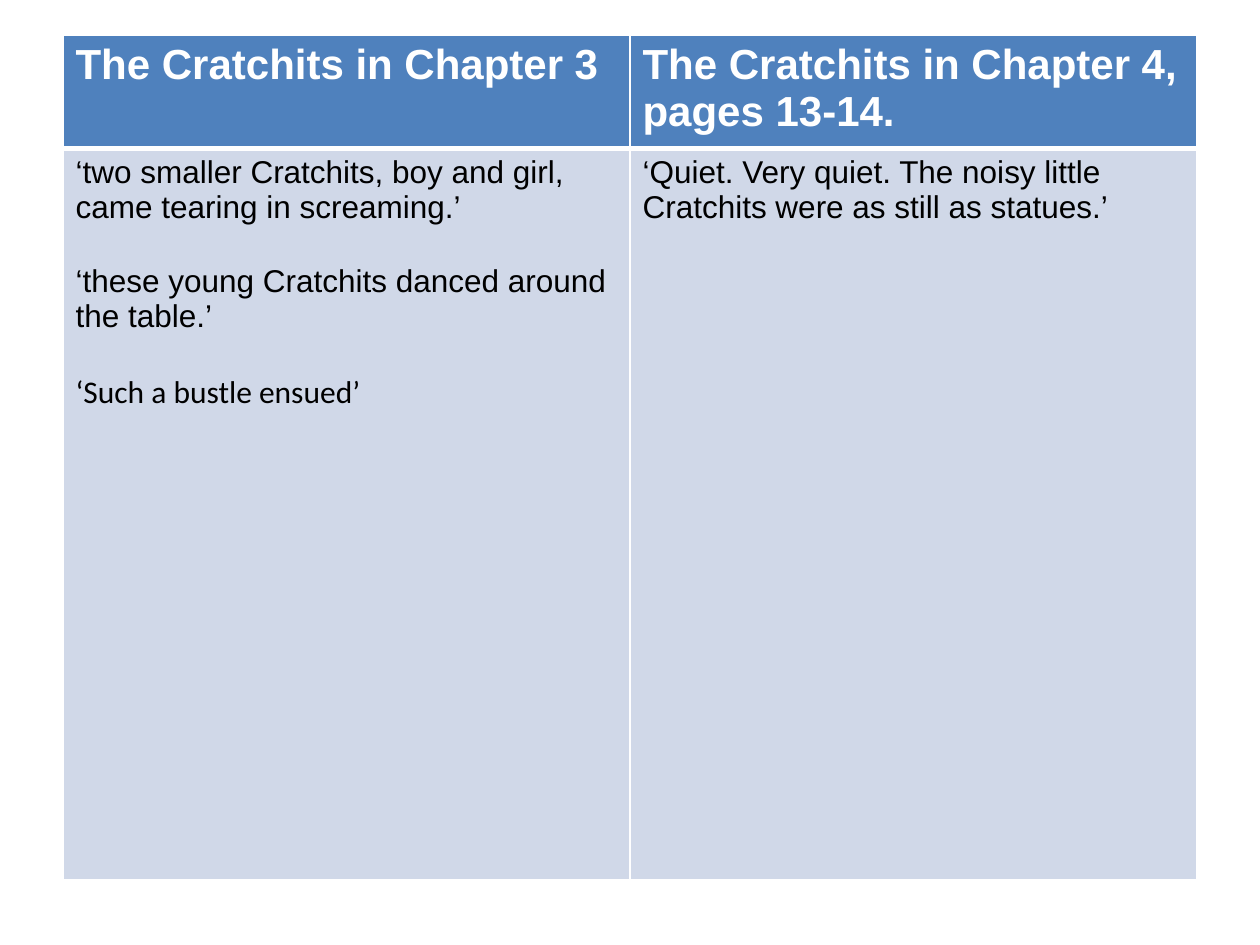
from lxml.etree import SubElement
from pptx import Presentation
from pptx.dml.color import RGBColor
from pptx.oxml.ns import qn
from pptx.util import Inches, Pt

WHITE = RGBColor(0xFF, 0xFF, 0xFF)
BLACK = RGBColor(0x00, 0x00, 0x00)
HEADER_BLUE = RGBColor(0x4F, 0x81, 0xBD)
BODY_BLUE = RGBColor(0xD0, 0xD8, 0xE8)

BLANK_LAYOUT = 6
COLUMN_WIDTH = 4.5
ROW_HEIGHTS = (0.9, 5.8)

# Each column: heading, then its quotations as (text, font).
COLUMNS = [
    ("The Cratchits in Chapter 3", [
        ("‘two smaller Cratchits, boy and girl, came tearing in screaming.’", "Arial"),
        ("‘these young Cratchits danced around the table.’", "Arial"),
        ("‘Such a bustle ensued’", "Calibri"),
    ]),
    ("The Cratchits in Chapter 4, pages 13-14.", [
        ("‘Quiet. Very quiet. The noisy little Cratchits were as still as statues.’", "Arial"),
    ]),
]


def set_borders(cell, **widths):
    """Draw white cell borders; widths are points keyed by side, in L, R, T, B order."""
    properties = cell._tc.get_or_add_tcPr()
    for side, width in widths.items():
        line = SubElement(properties, qn(f"a:ln{side}"), w=str(Pt(width)))
        fill = SubElement(line, qn("a:solidFill"))
        SubElement(fill, qn("a:srgbClr"), val=str(WHITE))


def fill_cell(cell, color):
    cell.fill.solid()
    cell.fill.fore_color.rgb = color


def add_run(paragraph, text, font_name, size, color, bold):
    run = paragraph.add_run()
    run.text = text
    font = run.font
    font.name = font_name
    font.size = Pt(size)
    font.bold = bold
    font.color.rgb = color


def write_heading(cell, heading):
    set_borders(cell, L=1, R=1, T=1, B=3)
    fill_cell(cell, HEADER_BLUE)
    add_run(cell.text_frame.paragraphs[0], heading, "Arial", 24, WHITE, True)


def write_quotations(cell, quotations):
    set_borders(cell, L=1, R=1, T=3, B=1)
    fill_cell(cell, BODY_BLUE)
    frame = cell.text_frame
    for index, (text, font_name) in enumerate(quotations):
        paragraph = frame.add_paragraph() if index else frame.paragraphs[0]
        if index:
            paragraph.space_before = Pt(22)
        add_run(paragraph, text, font_name, 18, BLACK, False)


def add_comparison_table(slide):
    frame = slide.shapes.add_table(
        len(ROW_HEIGHTS), len(COLUMNS), Inches(0.5), Inches(0.28),
        Inches(COLUMN_WIDTH * len(COLUMNS)), Inches(sum(ROW_HEIGHTS)))
    table = frame.table
    for row, height in zip(table.rows, ROW_HEIGHTS):
        row.height = Inches(height)
    for index, (heading, quotations) in enumerate(COLUMNS):
        table.columns[index].width = Inches(COLUMN_WIDTH)
        write_heading(table.cell(0, index), heading)
        write_quotations(table.cell(1, index), quotations)


def main():
    presentation = Presentation()
    presentation.slide_width = Inches(10)
    presentation.slide_height = Inches(7.5)
    slide = presentation.slides.add_slide(presentation.slide_layouts[BLANK_LAYOUT])
    add_comparison_table(slide)
    presentation.save("out.pptx")


if __name__ == "__main__":
    main()
